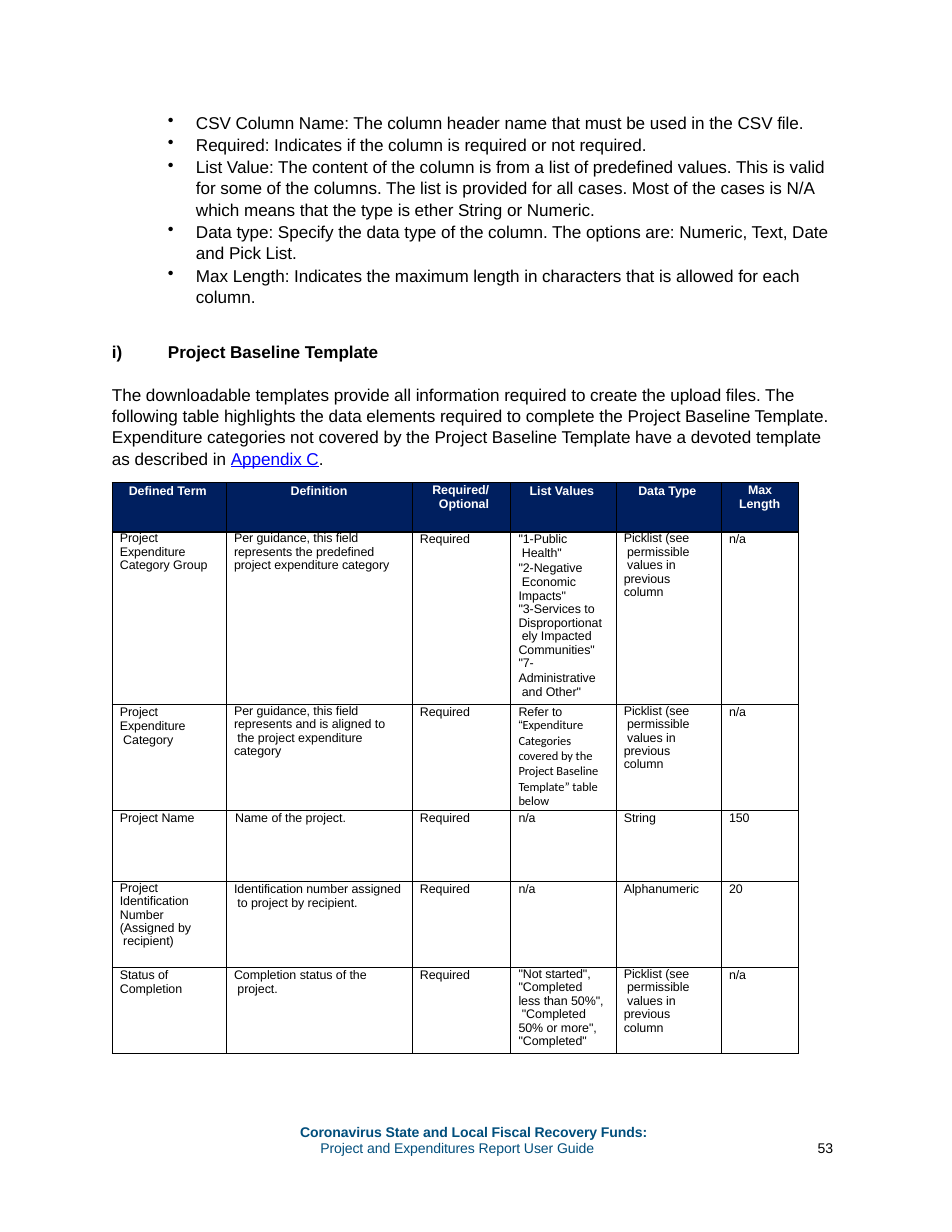
from dataclasses import dataclass
from typing import Optional, Union

import pptx
import pptx.dml.color
import pptx.enum.text
import pptx.oxml.ns
import pptx.util
from lxml import etree

Inches = pptx.util.Inches
Pt = pptx.util.Pt
qn = pptx.oxml.ns.qn
ALIGN = pptx.enum.text.PP_ALIGN

COLORS = {"ink": "000000", "white": "FFFFFF", "navy": "001F5F",
          "link": "0000FF", "foot": "004E7C"}


@dataclass
class Run:
    text: str
    color: Optional[str] = None
    font: str = "Arial"
    line: bool = False


@dataclass
class Para:
    runs: Union[str, list[Run]]
    gap: Union[float, pptx.util.Length] = 1.0
    top: float = 0
    left: float = 0.07
    first: float = 0
    bold: bool = False
    center: bool = False
    bullet: bool = False
    tab: Optional[float] = None


def rgb(name: str) -> pptx.dml.color.RGBColor:
    return pptx.dml.color.RGBColor.from_string(COLORS[name])


def add_run(para, run: Run, size: float, color: str, bold: bool) -> None:
    """Add a run; a newline in its text becomes a line break."""
    for i, part in enumerate(run.text.split("\n")):
        if i:
            para.add_line_break()
        piece = para.add_run()
        piece.text = part
        font = piece.font
        font.name, font.size, font.bold = run.font, Pt(size), bold
        font.underline = run.line
        font.color.rgb = rgb(run.color or color)
        font._element.set("spc", "-5")


def write(frame, paras: list[Para], size: float, color: str) -> None:
    for i, item in enumerate(paras):
        para = frame.add_paragraph() if i else frame.paragraphs[0]
        props = para._p.get_or_add_pPr()
        props.set("marL", str(Inches(item.left)))
        props.set("indent", str(Inches(item.first)))
        if item.bullet:
            etree.SubElement(props, qn("a:buChar"), char="•")
        if item.tab:
            tabs = etree.SubElement(props, qn("a:tabLst"))
            etree.SubElement(tabs, qn("a:tab"),
                             pos=str(Inches(item.tab)), algn="l")
        para.line_spacing = item.gap
        para.space_before = Pt(item.top)
        para.alignment = ALIGN.CENTER if item.center else ALIGN.LEFT
        runs = [Run(item.runs)] if isinstance(item.runs, str) else item.runs
        for run in runs:
            add_run(para, run, size, color, item.bold)


def add_text(slide, box: tuple, paras: list[Para], size: float,
             color: str, top: float = 0) -> None:
    frame = slide.shapes.add_textbox(*map(Inches, box)).text_frame
    frame.word_wrap = True
    frame.margin_left = frame.margin_right = frame.margin_bottom = 0
    frame.margin_top = Inches(top)
    write(frame, paras, size, color)


def set_edge(cell, side: str, width: float) -> None:
    edge = etree.SubElement(cell._tc.get_or_add_tcPr(), qn(f"a:{side}"),
                            w=str(Pt(width)))
    fill = etree.SubElement(edge, qn("a:solidFill"))
    etree.SubElement(fill, qn("a:srgbClr"), val=COLORS["ink"])


def add_grid(slide, left: float, top: float, cols: list[float],
             rows: list[float], cells: list[list]) -> None:
    frame = slide.shapes.add_table(
        len(rows), len(cols), Inches(left), Inches(top),
        Inches(sum(cols)), Inches(sum(rows)))
    table = frame.table
    table.first_row = table.horz_banding = False
    for col, width in zip(table.columns, cols):
        col.width = Inches(width)
    for r, (row, height) in enumerate(zip(table.rows, rows)):
        row.height = Inches(height)
        for cell, paras in zip(row.cells, cells[r]):
            cell.margin_left = cell.margin_right = 0
            cell.margin_top = cell.margin_bottom = 0
            for side in ("lnL", "lnR", "lnT", "lnB"):
                thick = r == 0 and side in ("lnT", "lnB")
                thick = thick or (r == 1 and side == "lnT")
                set_edge(cell, side, 1 if thick else 0.5)
            if r:
                cell.fill.background()
            else:
                cell.fill.solid()
                cell.fill.fore_color.rgb = rgb("navy")
            write(cell.text_frame, paras, 8, "ink" if r else "white")


def head(text: str, left: float = 0, first: float = 0, gap: float = 9.6,
         top: float = 0, center: bool = False) -> list[Para]:
    return [Para(text, Pt(gap), top, left, first, True, center)]


def one(text: str, left: float = 0.07) -> list[Para]:
    return [Para(text, Pt(9.4), left=left)]


def tight(text: str, top: float = 0.2) -> list[Para]:
    return [Para(text, 0.96, top)]


def loose(text: str, top: float = 0.3) -> list[Para]:
    return [Para(text, Pt(9.2), top)]


deck = pptx.Presentation()
deck.slide_width, deck.slide_height = Inches(8.5), Inches(11)
page = deck.slides.add_slide(deck.slide_layouts[6])

# Bullets, heading and introduction
points = [
    ("CSV Column Name: The column header name that must be used in the CSV file.", 1, 2.2),
    ("Required: Indicates if the column is required or not required.", 1, 1.2),
    ("List Value: The content of the column is from a list of predefined values. "
     "This is valid for some of the columns. The list is provided for all cases. "
     "Most of the cases is N/A which means that the type is ether String or Numeric.", 1.03, 0.8),
    ("Data type: Specify the data type of the column. The options are: Numeric, "
     "Text, Date and Pick List.", 1.03, 0.8),
    ("Max Length: Indicates the maximum length in characters that is allowed "
     "for each column.", 1.04, 0.8),
]
body = [Para(text, float(gap), top, 0.76, -0.25, bullet=True)
        for text, gap, top in points]
body.append(Para("i)\tProject Baseline Template", top=22.4, left=0.01,
                 bold=True, tab=0.51))
body.append(Para([
    Run("The downloadable templates provide all information required to create "
        "the upload files. The following table highlights the data elements "
        "required to complete the Project Baseline Template. Expenditure "
        "categories not covered by the Project Baseline Template have a devoted "
        "template as described in "),
    Run("Appendix C", "link", line=True), Run(".")], 1.03, 14, 0.01))
add_text(page, (0.99, 0.97, 6.5, 3.23), body, 11, "ink", 0.03)

# Table of data elements
pick = "Picklist (see\n permissible\n values in\nprevious\ncolumn"
values = (loose("\"1-Public\n Health\"", 0.6)
          + loose("\"2-Negative\n Economic", 0)
          + [Para("Impacts\"", Pt(8.8))]
          + tight("\"3-Services to\nDisproportionat\n ely Impacted\nCommunities\"\n\"7-")
          + loose("Administrative\n and Other\""))
refer = [
    Para([Run("Refer to\n“"), Run("Expenditure", font="Calibri")], Pt(9.3), 0.3),
    Para([Run("Categories\ncovered by the\nProject Baseline\nTemplate” table",
              font="Calibri")], Pt(9.8)),
    Para([Run("below", font="Calibri")], Pt(9.1)),
]
cells = [
    [head("Defined Term", 0.15), head("Definition", center=True),
     head("Required/\n Optional", 0.21, -0.03, 9.2, 0.6),
     head("List Values", 0.17), head("Data Type", 0.2),
     head("Max\nLength", 0.16, 0.08, 9.2, 0.6)],
    [tight("Project\nExpenditure\nCategory Group"),
     tight("Per guidance, this field\nrepresents the predefined\nproject expenditure category"),
     one("Required"), values, tight(pick), one("n/a")],
    [loose("Project\nExpenditure\n Category"),
     tight("Per guidance, this field\nrepresents and is aligned to\n"
           " the project expenditure\ncategory"),
     one("Required"), refer, tight(pick), one("n/a")],
    [one("Project Name"), one("Name of the project.", 0.08),
     one("Required"), one("n/a"), one("String"), one("150")],
    [tight("Project\nIdentification\nNumber\n(Assigned by\n recipient)"),
     loose("Identification number assigned\n to project by recipient."),
     one("Required"), one("n/a"), one("Alphanumeric"), one("20")],
    [loose("Status of\nCompletion"),
     loose("Completion status of the\n project."), one("Required"),
     tight("\"Not started\",\n\"Completed\nless than 50%\",\n \"Completed\n"
           "50% or more\",\n\"Completed\""),
     tight(pick), one("n/a")],
]
add_grid(page, 1, 4.31, [1.02, 1.66, 0.88, 0.94, 0.94, 0.69],
         [0.44, 1.54, 0.95, 0.63, 0.77, 0.77], cells)

# Footer and page number
add_text(page, (2.67, 10.03, 3.16, 0.31), [
    Para("Coronavirus State and Local Fiscal Recovery Funds:", Pt(10.6),
         left=0.01, bold=True),
    Para("Project and Expenditures Report User Guide", Pt(10.6), left=0.19),
], 9, "foot")
add_text(page, (7.26, 10.17, 0.22, 0.17), [Para("53", left=0.04)], 9, "ink")

deck.save("out.pptx")
